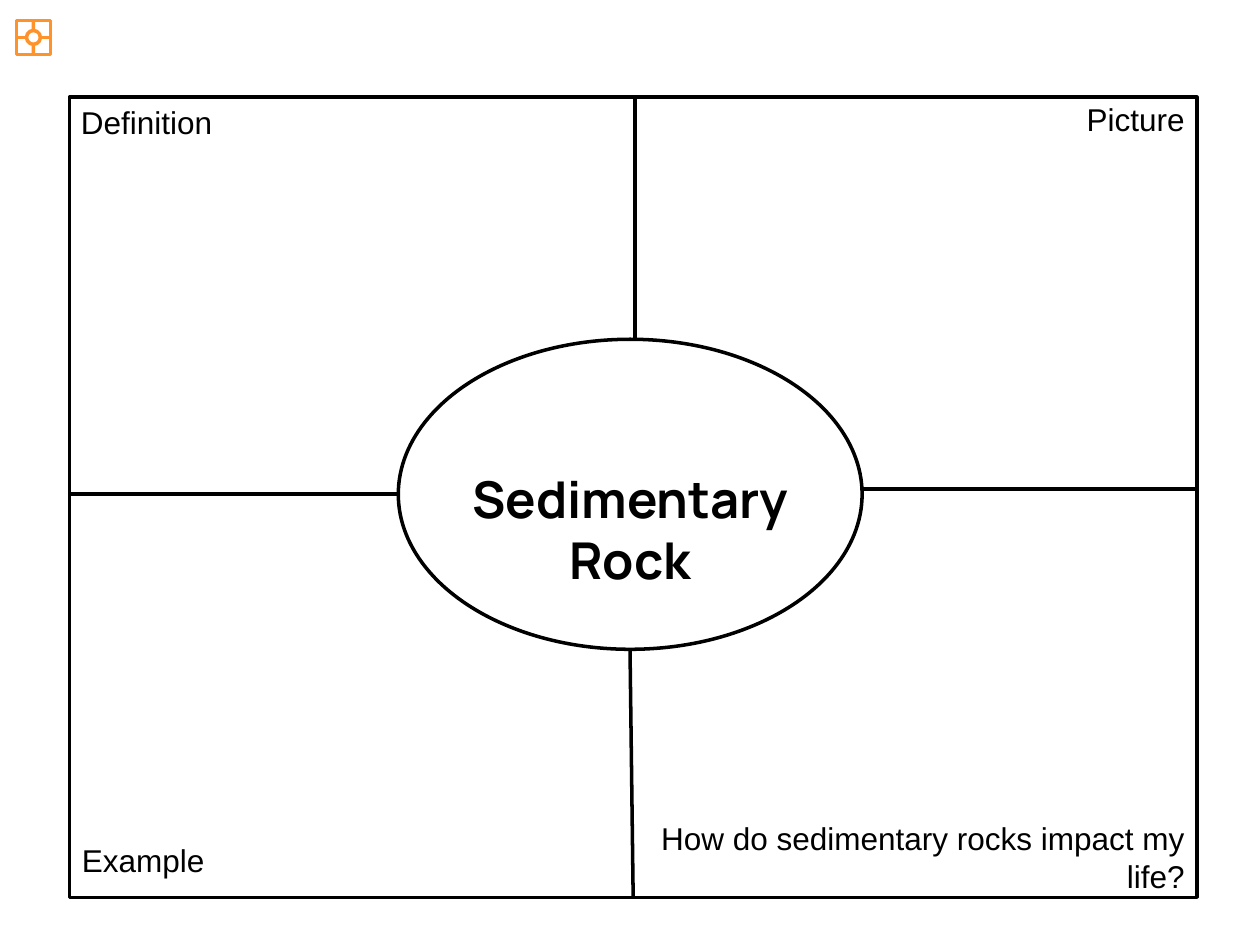
from lxml.etree import SubElement
from pptx import Presentation
from pptx.dml.color import RGBColor
from pptx.enum.shapes import MSO_CONNECTOR, MSO_SHAPE
from pptx.enum.text import PP_ALIGN
from pptx.oxml.ns import qn
from pptx.util import Cm, Pt

COLORS = {"ink": "000000", "icon": "FF932B", "paper": "FFFFFF"}
TOP, LEFT, BOTTOM, RIGHT = range(4)  # connection sites of a rectangle


def outline(part, color):
    part.line.color.rgb = RGBColor.from_string(COLORS[color])
    part.line.width = Pt(2)


def add_outlined(page, kind, box, color, fill=None):
    shape = page.shapes.add_shape(kind, *(Cm(length) for length in box))
    shape.shadow.inherit = False
    if fill:
        shape.fill.solid()
        shape.fill.fore_color.rgb = RGBColor.from_string(COLORS[fill])
    else:
        shape.fill.background()
    outline(shape, color)
    return shape


def add_label(page, box, text, align=PP_ALIGN.LEFT, size=18, font="Arial", bold=False):
    label = page.shapes.add_textbox(*(Cm(length) for length in box))
    label.text_frame.word_wrap = True
    para = label.text_frame.paragraphs[0]
    para.alignment = align
    span = para.add_run()
    span.text = text
    span.font.size = Pt(size)
    span.font.name = font
    span.font.bold = bold
    span.font.color.rgb = RGBColor.from_string(COLORS["ink"])


def add_quadrants(page, box, hub, spokes, color):
    """Frame, spokes (rim point, hub point, joined side) and an oval hub."""
    left, top, width, height = box
    frame = add_outlined(page, MSO_SHAPE.RECTANGLE, box, color)
    for rim, inner, side in spokes:
        spoke = page.shapes.add_connector(
            MSO_CONNECTOR.STRAIGHT,
            Cm(left + rim[0]), Cm(top + rim[1]),
            Cm(left + inner[0]), Cm(top + inner[1]))
        if side is not None:
            spoke.begin_connect(frame, side)
        outline(spoke, color)
        SubElement(spoke.element.spPr, qn("a:effectLst"))
    hub_box = (left + hub[0], top + hub[1], hub[2], hub[3])
    add_outlined(page, MSO_SHAPE.OVAL, hub_box, color, fill="paper")


def add_icon(page, left, top, size, hub_size):
    middle, near = size / 2, (size - hub_size) / 2
    far = near + hub_size
    spokes = [
        ((middle, 0), (middle, near), TOP),
        ((middle, size), (middle, far), BOTTOM),
        ((0, middle), (near, middle), LEFT),
        ((size, middle), (far, middle), RIGHT),
    ]
    add_quadrants(page, (left, top, size, size),
                  (near, near, hub_size, hub_size), spokes, "icon")


def add_organizer(page, left, top, width, height):
    # Frame, dividers and central oval
    spokes = [
        ((11.4, 0), (11.4, 4.88), None),
        ((width / 2, height), (11.3, 11.12), BOTTOM),
        ((0, 8), (6.63, 8), None),
        ((width, 7.9), (15.98, 7.9), None),
    ]
    add_quadrants(page, (left, top, width, height),
                  (6.63, 4.88, 9.35, 6.25), spokes, "ink")

    # Corner prompts
    add_label(page, (left - 0.02, top, 3.18, 1.02), "Definition")
    add_label(page, (left, top + 14.86, 3, 1.02), "Example")
    add_label(page, (left + width - 2.52, top - 0.07, 2.52, 1.02), "Picture",
              PP_ALIGN.RIGHT)
    add_label(page, (left + width - 11.94, top + 14.43, 11.94, 1.8),
              "How do sedimentary rocks impact my life?", PP_ALIGN.RIGHT)

    # Topic
    add_label(page, (left + 6.91, top + 7.34, 8.79, 2.74), "Sedimentary Rock",
              PP_ALIGN.CENTER, 29, "Manrope", True)


def main():
    deck = Presentation()
    deck.slide_width, deck.slide_height = Cm(25.4), Cm(19.05)
    page = deck.slides.add_slide(deck.slide_layouts[6])
    add_icon(page, 0.33, 0.41, 0.69, 0.28)
    add_organizer(page, 1.4, 1.96, 22.73, 16.13)
    deck.save("out.pptx")


if __name__ == "__main__":
    main()
